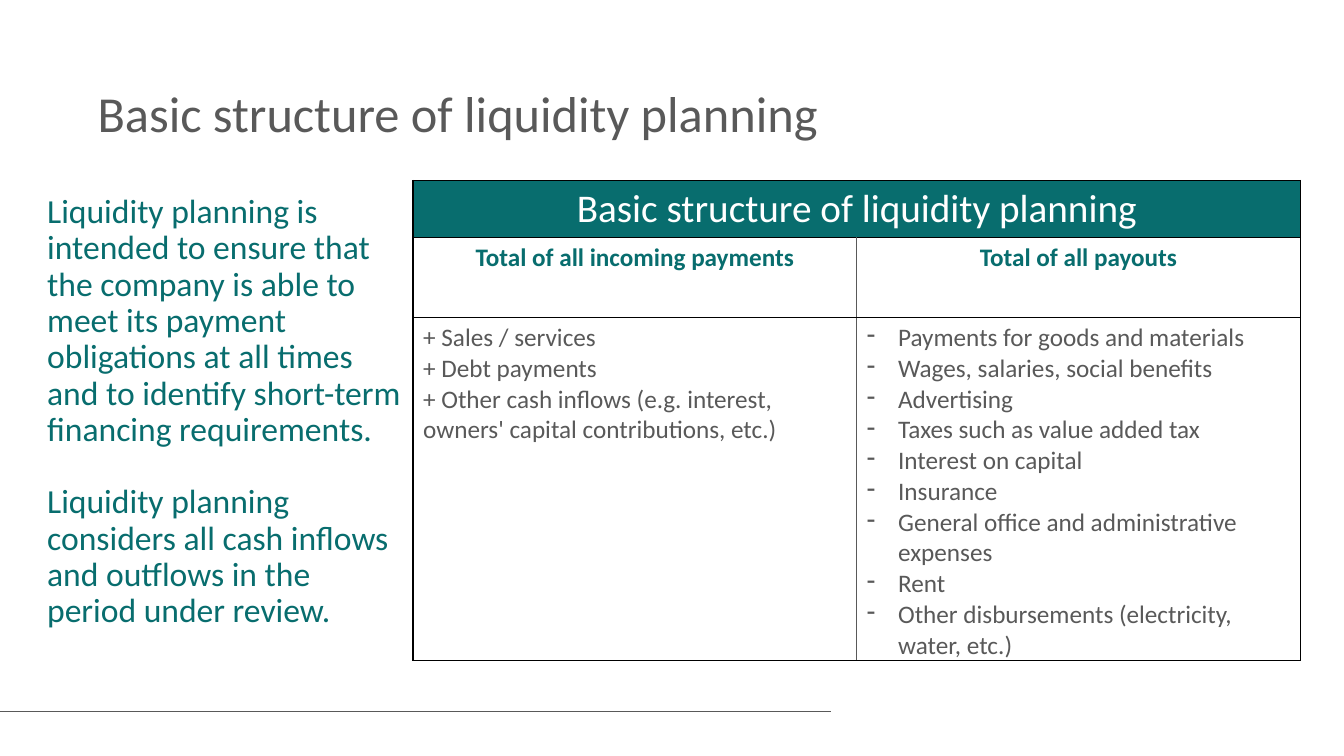
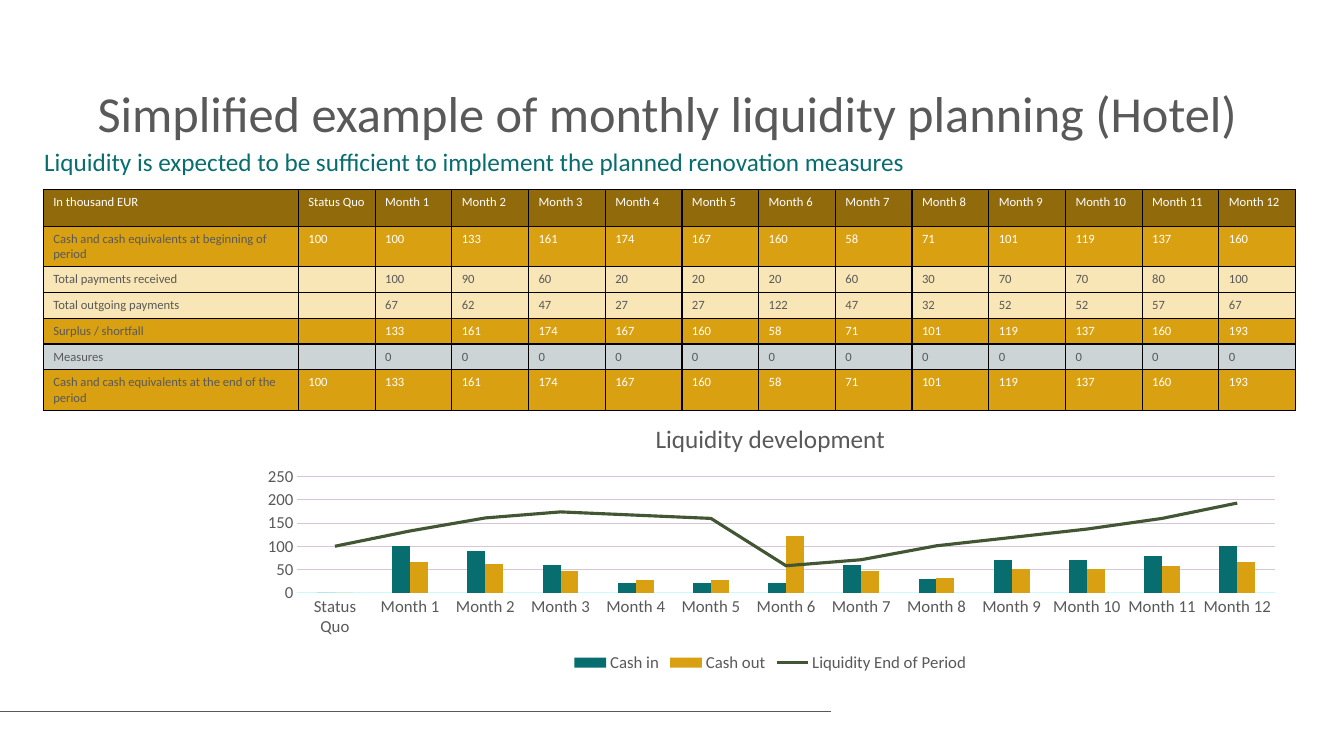
from lxml import etree
from pptx import Presentation
from pptx.chart.data import CategoryChartData
from pptx.dml.color import RGBColor
from pptx.enum.chart import XL_CHART_TYPE, XL_LEGEND_POSITION, XL_TICK_MARK
from pptx.enum.shapes import MSO_CONNECTOR
from pptx.enum.text import PP_ALIGN
from pptx.oxml import parse_xml
from pptx.oxml.ns import nsdecls, qn
from pptx.util import Cm, Pt

COLUMNS = XL_CHART_TYPE.COLUMN_CLUSTERED
LEGEND_BOTTOM = XL_LEGEND_POSITION.BOTTOM
NO_TICK = XL_TICK_MARK.NONE
STRAIGHT = MSO_CONNECTOR.STRAIGHT
CENTER = PP_ALIGN.CENTER
FONT = "Calibri"
COLORS = {
    "text": "595959", "teal": "086D6E", "white": "FFFFFF", "black": "000000",
    "brown": "916A0C", "gold": "D9A012", "cream": "F9E6B6", "silver": "CCD4D5",
    "green": "435634", "axis": "C8FBFB", "grid": "D7C6D8",
}
RGB = {name: RGBColor.from_string(value) for name, value in COLORS.items()}


def write(frame, text, size=18, color="text", bold=False, align=None,
          spacing=None, before=None, bullet=None):
    """Fill the first paragraph of the frame, or add another one."""
    para = frame.paragraphs[0]
    if para.runs:
        para = frame.add_paragraph()
    para.alignment = align
    para.line_spacing = spacing
    if before:
        para.space_before = Pt(before)
    if bullet:
        props = para._p.get_or_add_pPr()
        props.set("marL", str(Cm(0.79)))
        props.set("indent", str(-Cm(0.79)))
        etree.SubElement(props, qn("a:buChar"), char=bullet)
    if not text:
        etree.SubElement(para._p, qn("a:endParaRPr"), sz=str(size * 100))
        return
    span = para.add_run()
    span.text = text
    span.font.name = FONT
    span.font.size = Pt(size)
    span.font.bold = bold
    span.font.color.rgb = RGB[color]


def style_cell(cell, fill, **sides):
    """Draw black borders, with other colours for the sides named, and fill."""
    props = cell._tc.get_or_add_tcPr()
    for side in "LRTB":
        line = etree.SubElement(props, qn("a:ln" + side), w=str(Pt(1)))
        solid = etree.SubElement(line, qn("a:solidFill"))
        etree.SubElement(solid, qn("a:srgbClr"), val=COLORS[sides.get(side, "black")])
    cell.fill.solid()
    cell.fill.fore_color.rgb = RGB[fill]


deck = Presentation()
deck.slide_width, deck.slide_height = Cm(33.87), Cm(19.05)

# Shared title and footer line
titles = ["Basic structure of liquidity planning",
          "Simplified example of monthly liquidity planning (Hotel)"]
pages = []
for title in titles:
    page = deck.slides.add_slide(deck.slide_layouts[6])
    rule = page.shapes.add_connector(STRAIGHT, 0, Cm(17.93), Cm(20.93), Cm(17.93))
    rule.line.color.rgb = RGB["text"]
    rule.line.width = Pt(1)
    etree.SubElement(rule._element.spPr, qn("a:effectLst"))
    box = page.shapes.add_textbox(Cm(2.21), Cm(2.11), Cm(29.49), Cm(2.24))
    box.text_frame.word_wrap = True
    write(box.text_frame, title, size=36, spacing=0.9)
    pages.append(page)
structure_page, example_page = pages

# Slide 1: explanation
box = structure_page.shapes.add_textbox(Cm(0.94), Cm(4.78), Cm(9.47), Cm(12.04))
box.text_frame.word_wrap = True
write(box.text_frame, "Liquidity planning is intended to ensure that the company is able to "
      "meet its payment obligations at all times and to identify short-term financing "
      "requirements.", size=24, color="teal", spacing=0.9)
write(box.text_frame, "Liquidity planning considers all cash inflows and outflows in the "
      "period under review.", size=24, color="teal", spacing=0.9, before=26)

# Slide 1: structure table
heights = [1.42, 2.01, 8.6]
table = structure_page.shapes.add_table(
    3, 2, Cm(10.41), Cm(4.55), Cm(22.36), Cm(sum(heights))).table
table.first_row = table.horz_banding = False
for row, height in zip(table.rows, heights):
    row.height = Cm(height)
for row in range(3):
    fill = "white" if row else "teal"
    inner = "text" if row else "black"
    style_cell(table.cell(row, 0), fill, R=inner)
    style_cell(table.cell(row, 1), fill, L=inner)
table.cell(0, 0).merge(table.cell(0, 1))
write(table.cell(0, 0).text_frame, titles[0], size=28, color="white", align=CENTER)

sides = [
    ("Total of all incoming payments", None,
     ["+ Sales / services", "+ Debt payments",
      "+ Other cash inflows (e.g. interest, owners' capital contributions, etc.)"]),
    ("Total of all payouts", "-",
     ["Payments for goods and materials", "Wages, salaries, social benefits",
      "Advertising", "Taxes such as value added tax", "Interest on capital",
      "Insurance", "General office and administrative expenses", "Rent",
      "Other disbursements (electricity, water, etc.)"]),
]
for column, (heading, bullet, items) in enumerate(sides):
    write(table.cell(1, column).text_frame, heading, color="teal", bold=True, align=CENTER)
    for item in items:
        write(table.cell(2, column).text_frame, item, bullet=bullet)

# Slide 2: figures shared by table and chart, status quo first
periods = ["Status Quo"] + [f"Month {month}" for month in range(1, 13)]
cash_in = [0, 100, 90, 60, 20, 20, 20, 60, 30, 70, 70, 80, 100]
cash_out = [0, 67, 62, 47, 27, 27, 122, 47, 32, 52, 52, 57, 67]
closing = [100, 133, 161, 174, 167, 160, 58, 71, 101, 119, 137, 160, 193]
opening = closing[:1] + closing[:-1]

# Slide 2: monthly table (label, values, fill, label colour, value colour, height)
lines = [
    ("In thousand EUR", periods, "brown", "white", "white", 0.92),
    ("Cash and cash equivalents at beginning of period", opening,
     "gold", "text", "white", 1.02),
    ("Total payments received", [""] + cash_in[1:], "cream", "text", "text", 0.65),
    ("Total outgoing payments", [""] + cash_out[1:], "cream", "text", "text", 0.65),
    ("Surplus / shortfall", [""] + closing[1:], "gold", "text", "white", 0.65),
    ("Measures", [""] + [0] * 12, "silver", "text", "text", 0.65),
    ("Cash and cash equivalents at the end of the period", closing,
     "gold", "text", "white", 1.02),
]
table_width, label_width = 31.57, 6.43
table = example_page.shapes.add_table(
    len(lines), 14, Cm(1.09), Cm(4.78), Cm(table_width), Cm(5.5)).table
table.first_row = table.horz_banding = False
for index, column in enumerate(table.columns):
    column.width = Cm((table_width - label_width) / 13 if index else label_width)
for row, (label, values, fill, label_color, value_color, height) in enumerate(lines):
    table.rows[row].height = Cm(height)
    for index, value in enumerate([label] + values):
        cell = table.cell(row, index)
        style_cell(cell, fill)
        write(cell.text_frame, str(value), size=9,
              color=value_color if index else label_color)

# Slide 2: key message
box = example_page.shapes.add_textbox(Cm(0.86), Cm(3.66), Cm(31.8), Cm(0.94))
box.text_frame.word_wrap = True
write(box.text_frame, "Liquidity is expected to be sufficient to implement the planned "
      "renovation measures", color="teal", spacing=0.9)

# Slide 2: chart
data = CategoryChartData()
data.categories = periods
data.add_series("Cash in", cash_in)
data.add_series("Cash out", cash_out)
data.add_series("Liquidity End of Period", closing)
chart = example_page.shapes.add_chart(
    COLUMNS, Cm(6.17), Cm(10.24), Cm(26.49), Cm(6.81), data).chart
chart.font.name = FONT
chart.font.size = Pt(12)
chart.font.color.rgb = RGB["text"]
chart.has_title = True
write(chart.chart_title.text_frame, "Liquidity development")
chart.has_legend = True
chart.legend.position = LEGEND_BOTTOM
chart.legend.include_in_layout = False

value_axis, period_axis = chart.value_axis, chart.category_axis
for axis in (value_axis, period_axis):
    axis.major_tick_mark = axis.minor_tick_mark = NO_TICK
value_axis.minimum_scale, value_axis.maximum_scale, value_axis.major_unit = 0, 250, 50
value_axis.format.line.fill.background()
for line, color in ((value_axis.major_gridlines.format.line, "grid"),
                    (period_axis.format.line, "axis")):
    line.color.rgb = RGB[color]
    line.width = Pt(0.75)

columns = chart.plots[0]
columns.gap_width = 219
columns.vary_by_categories = False
bar_in, bar_out, balance = columns.series
for bar, color in ((bar_in, "teal"), (bar_out, "gold")):
    bar.format.fill.solid()
    bar.format.fill.fore_color.rgb = RGB[color]
balance.format.line.color.rgb = RGB["green"]
balance.format.line.width = Pt(2.25)

# The closing balance becomes a line on the same axes
series = balance.format.line._get_or_add_ln().getparent().getparent()
for flag in series.findall(qn("c:invertIfNegative")):
    series.remove(flag)
series.find(qn("c:spPr")).addnext(
    parse_xml(f'<c:marker {nsdecls("c")}><c:symbol val="none"/></c:marker>'))
etree.SubElement(series, qn("c:smooth"), val="0")
bar_chart = series.getparent()
line_chart = parse_xml(
    f'<c:lineChart {nsdecls("c")}><c:grouping val="standard"/><c:varyColors val="0"/>'
    '<c:marker val="1"/></c:lineChart>')
line_chart.insert(2, series)
for axis_id in bar_chart.findall(qn("c:axId")):
    etree.SubElement(line_chart, qn("c:axId"), val=axis_id.get("val"))
bar_chart.addnext(line_chart)

# Fixed plot area inside the chart
plot_area = bar_chart.getparent()
for old in plot_area.findall(qn("c:layout")):
    plot_area.remove(old)
layout = etree.Element(qn("c:layout"))
manual = etree.SubElement(layout, qn("c:manualLayout"))
for name, value in (("layoutTarget", "inner"), ("xMode", "edge"), ("yMode", "edge"),
                    ("x", "0.05"), ("y", "0.26"), ("w", "0.93"), ("h", "0.43")):
    etree.SubElement(manual, qn("c:" + name), val=value)
plot_area.insert(0, layout)

deck.save("out.pptx")
